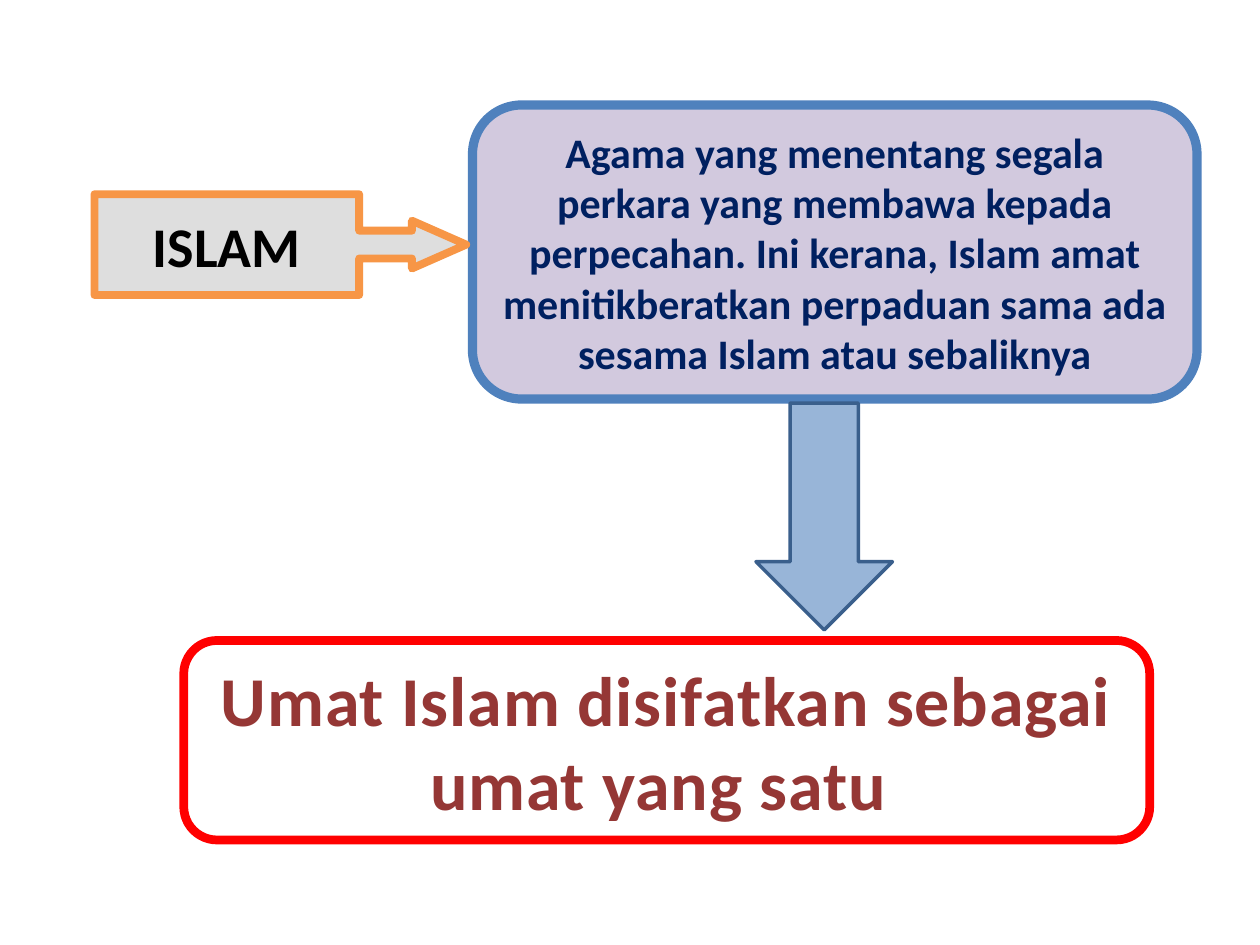
from lxml import etree
from pptx import Presentation, util as u
from pptx.dml.color import RGBColor
from pptx.enum import shapes, text
from pptx.oxml.ns import qn

KIND = shapes.MSO_SHAPE
COLUMNS, ROWS = 24, 18

THEME = {
    "font": "Calibri",
    "religion": {"fill": ("000000", 13), "line": ("F79646", 4.5), "ink": "000000", "size": 32},
    "teaching": {"fill": ("CCC1DA", 87), "line": ("4F81BD", 5.25), "ink": "002060", "size": 24},
    "ummah": {"fill": None, "line": ("FF0000", 5), "ink": "953735", "size": 40, "spacing": 0.5},
    "flow": {"fill": ("4F81BD", 58), "line": ("3A5F8C", 2)},
}

PARTS = [
    {"role": "teaching", "kind": KIND.ROUNDED_RECTANGLE, "grid": (9, 2, 13.8, 5.6),
     "words": "Agama yang menentang segala perkara yang membawa kepada perpecahan. "
              "Ini kerana, Islam amat menitikberatkan perpaduan sama ada sesama Islam "
              "atau sebaliknya"},
    {"role": "ummah", "kind": KIND.ROUNDED_RECTANGLE, "grid": (3.5, 12.2, 18.4, 3.8),
     "words": "Umat Islam disifatkan sebagai umat yang satu "},
    {"role": "religion", "kind": KIND.RIGHT_ARROW_CALLOUT, "grid": (1.8, 3.7, 7.08, 1.92),
     "adjust": (0.276, 0.237, 0.538, 0.712), "words": "ISLAM"},
    {"role": "flow", "kind": KIND.DOWN_ARROW, "grid": (14.4, 7.68, 2.6, 4.32)},
]


def paint(shape, style):
    shape.shadow.inherit = False
    if style["fill"]:
        color, opacity = style["fill"]
        shape.fill.solid()
        shape.fill.fore_color.rgb = RGBColor.from_string(color)
        tint = shape._element.spPr.find(qn("a:solidFill")).find(qn("a:srgbClr"))
        etree.SubElement(tint, qn("a:alpha"), val=str(opacity * 1000))
    else:
        shape.fill.background()
    color, width = style["line"]
    shape.line.color.rgb = RGBColor.from_string(color)
    shape.line.width = u.Pt(width)


def write(shape, words, style):
    frame = shape.text_frame
    frame.word_wrap = True
    frame.vertical_anchor = text.MSO_ANCHOR.MIDDLE
    paragraph = frame.paragraphs[0]
    paragraph.alignment = text.PP_ALIGN.CENTER
    run = paragraph.add_run()
    run.text = words
    font = paragraph.font
    font.name, font.size, font.bold = THEME["font"], u.Pt(style["size"]), True
    font.color.rgb = RGBColor.from_string(style["ink"])
    if "spacing" in style:
        run._r.get_or_add_rPr().set("spc", str(int(style["spacing"] * 100)))


def build():
    deck = Presentation()
    deck.slide_width, deck.slide_height = u.Inches(10), u.Inches(7.5)
    slide = deck.slides.add_slide(deck.slide_layouts[6])
    cell_w, cell_h = deck.slide_width / COLUMNS, deck.slide_height / ROWS
    for part in PARTS:
        col, row, wide, tall = part["grid"]
        shape = slide.shapes.add_shape(
            part["kind"], int(col * cell_w), int(row * cell_h),
            int(wide * cell_w), int(tall * cell_h))
        for index, value in enumerate(part.get("adjust", ())):
            shape.adjustments[index] = value
        style = THEME[part["role"]]
        paint(shape, style)
        if "words" in part:
            write(shape, part["words"], style)
    deck.save("out.pptx")


if __name__ == "__main__":
    build()
